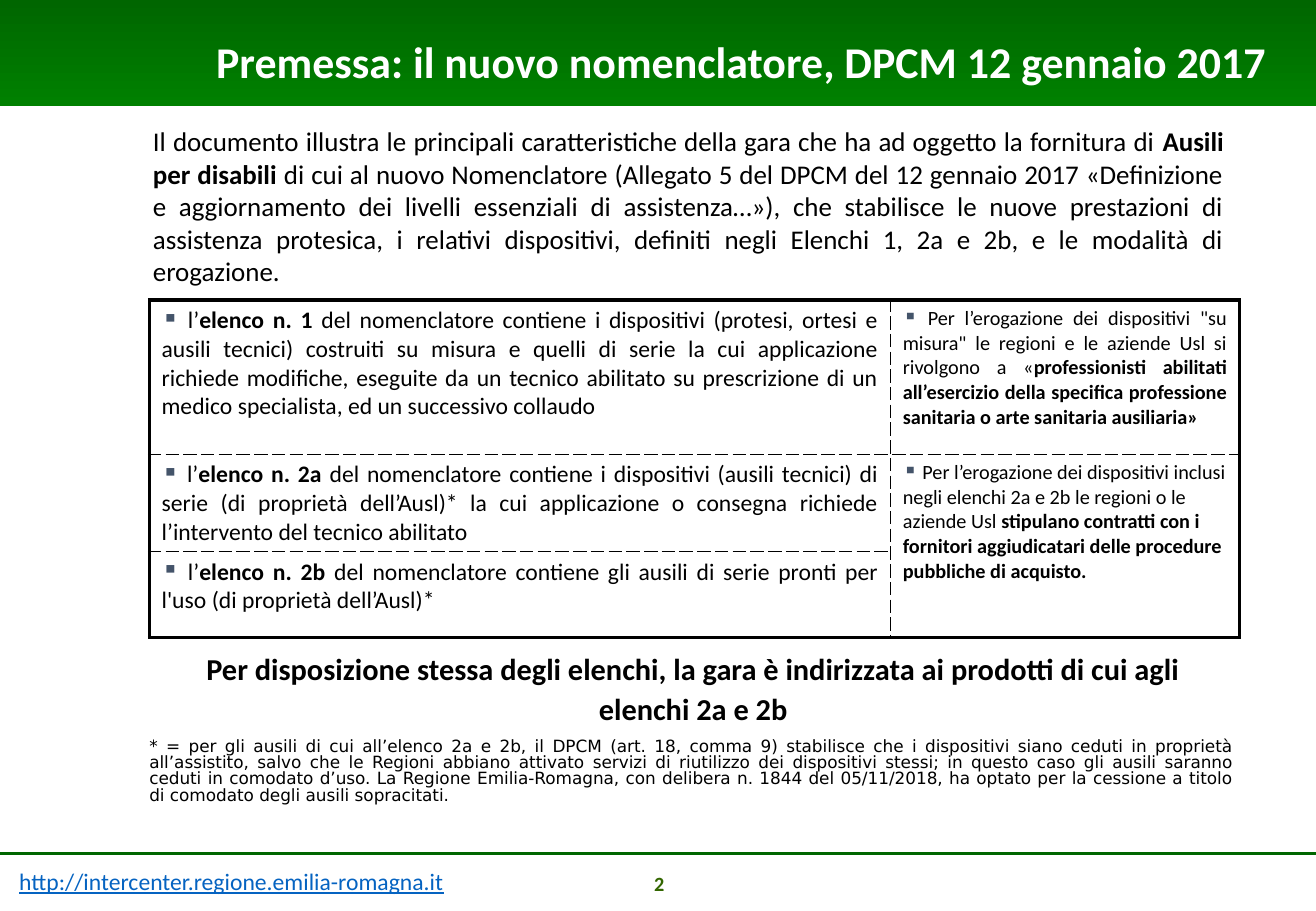
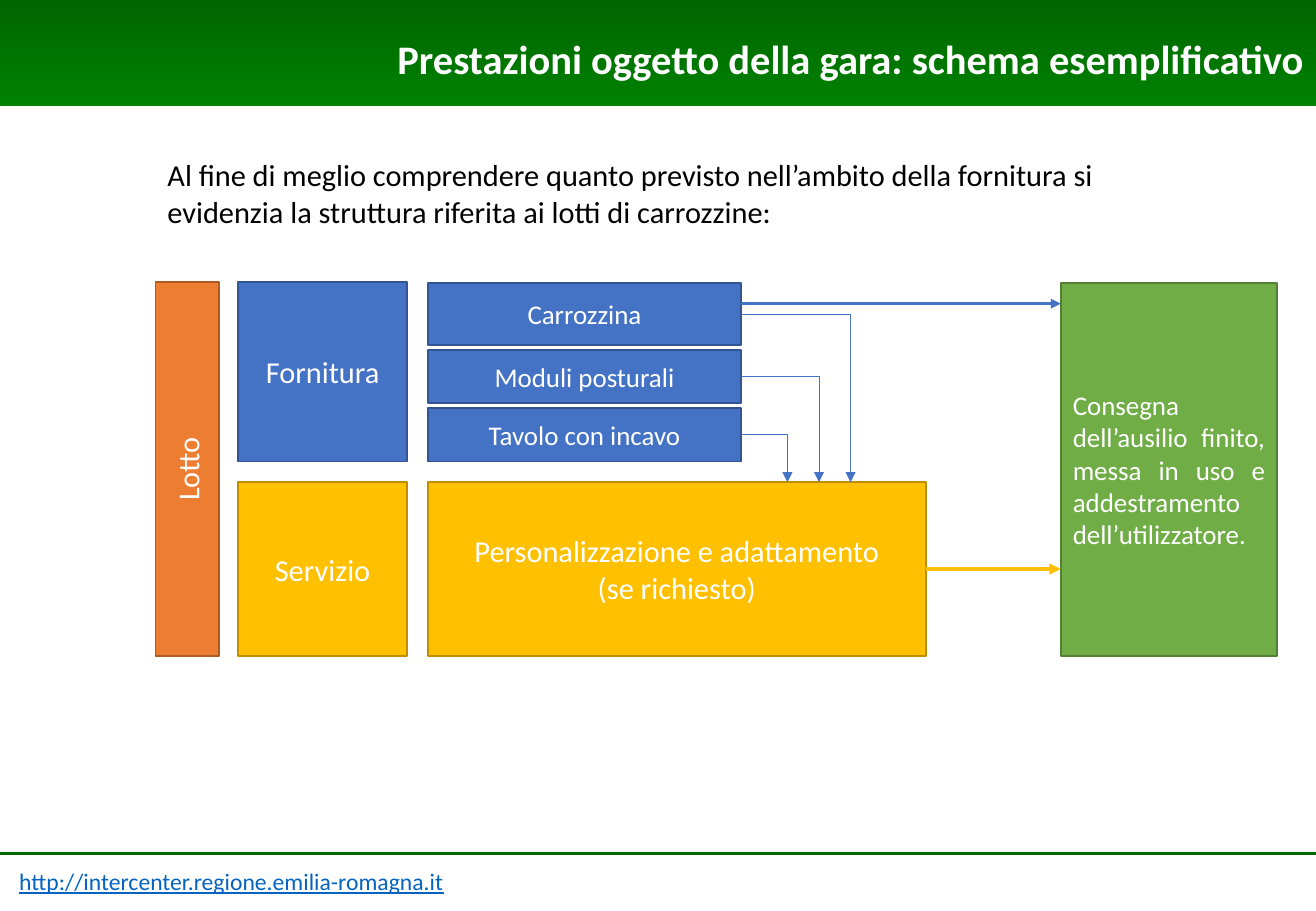
from lxml import etree
from pptx import Presentation
from pptx.dml.color import RGBColor
from pptx.enum.shapes import MSO_CONNECTOR, MSO_SHAPE
from pptx.enum.text import MSO_ANCHOR, PP_ALIGN
from pptx.oxml.ns import qn
from pptx.util import Inches, Pt

LEFT, CENTER, RIGHT, JUSTIFY = PP_ALIGN.LEFT, PP_ALIGN.CENTER, PP_ALIGN.RIGHT, PP_ALIGN.JUSTIFY
MIDDLE = MSO_ANCHOR.MIDDLE
RECTANGLE = MSO_SHAPE.RECTANGLE
STRAIGHT, ELBOW = MSO_CONNECTOR.STRAIGHT, MSO_CONNECTOR.ELBOW

WIDTH, HEIGHT = 10.83, 7.5
COLORS = {
    "band_top": "006600", "band_bottom": "008000", "number": "336600", "link": "0563C1",
    "white": "FFFFFF", "black": "000000", "bullet": "44546A",
    "blue": "4472C4", "blue_line": "325491",
    "gold": "FFC000", "gold_line": "BD8E00",
    "orange": "ED7D31", "orange_line": "AF5C24",
    "green": "70AD47", "green_line": "538035",
}

SITE = "http://intercenter.regione.emilia-romagna.it"
PREMISE_TITLE = "Premessa: il nuovo nomenclatore, DPCM 12 gennaio 2017"
PREMISE = (
    "Il documento illustra le principali caratteristiche della gara che ha ad oggetto la fornitura di "
    "|Ausili per disabili |di cui al nuovo Nomenclatore (Allegato 5 del DPCM del 12 gennaio 2017 "
    "«Definizione e aggiornamento dei livelli essenziali di assistenza…»), che stabilisce le nuove "
    "prestazioni di assistenza protesica, i relativi dispositivi, definiti negli Elenchi 1, 2a e 2b, "
    "e le modalità di erogazione."
)
LISTS = [
    " l’|elenco n. 1| del nomenclatore contiene i dispositivi (protesi, ortesi e ausili tecnici) "
    "costruiti su misura e quelli di serie la cui applicazione richiede modifiche, eseguite da un "
    "tecnico abilitato su prescrizione di un medico specialista, ed un successivo collaudo",
    " l’|elenco n. 2a| del nomenclatore contiene i dispositivi (ausili tecnici) di serie (di proprietà "
    "dell’Ausl)* la cui applicazione o consegna richiede l’intervento del tecnico abilitato",
    " l’|elenco n. 2b| del nomenclatore contiene gli ausili di serie pronti per l'uso "
    "(di proprietà dell’Ausl)*",
]
SUPPLIERS = [
    (" Per l’erogazione dei dispositivi \"su misura\" le regioni e le aziende Usl si rivolgono a «"
     "|professionisti abilitati all’esercizio della specifica professione sanitaria o arte sanitaria "
     "ausiliaria»", JUSTIFY),
    (" Per l’erogazione dei dispositivi inclusi negli elenchi 2a e 2b le regioni o le aziende Usl "
     "|stipulano contratti con i fornitori aggiudicatari delle procedure pubbliche di acquisto.", LEFT),
]
COLUMN_WIDTHS = [6.1, 2.87]
ROW_HEIGHTS = [1.27, 0.8, 0.71]
SCOPE = ("Per disposizione stessa degli elenchi, la gara è indirizzata ai prodotti di cui agli "
         "elenchi 2a e 2b")
FOOTNOTE = (
    "* = per gli ausili di cui all’elenco 2a e 2b, il DPCM (art. 18, comma 9) stabilisce che i "
    "dispositivi siano ceduti in proprietà all’assistito, salvo che le Regioni abbiano attivato servizi "
    "di riutilizzo dei dispositivi stessi; in questo caso gli ausili saranno ceduti in comodato d’uso. "
    "La Regione Emilia-Romagna, con delibera n. 1844 del 05/11/2018, ha optato per la cessione a titolo "
    "di comodato degli ausili sopracitati."
)

SCHEME_TITLE = "Prestazioni oggetto della gara: schema esemplificativo"
SCHEME_INTRO = ("Al fine di meglio comprendere quanto previsto nell’ambito della fornitura si evidenzia "
                "la struttura riferita ai lotti di carrozzine:")
PARTS = [("Carrozzina", 0.51), ("Moduli posturali", 0.44), ("Tavolo con incavo", 0.44)]
DELIVERY = "Consegna dell’ausilio finito,\nmessa in uso e addestramento dell’utilizzatore."
TOP, SERVICE_TOP, BOTTOM = 2.32, 3.97, 5.4
SUPPLY_HEIGHT, SERVICE_HEIGHT = 1.48, BOTTOM - SERVICE_TOP
LOT_LEFT, KIND_LEFT, PART_LEFT, DELIVERY_LEFT = 1.28, 1.96, 3.52, 8.73
KIND_WIDTH, PART_WIDTH, ADAPT_WIDTH = 1.39, 2.58, 4.1
PART_TOP, PART_GAP = 2.33, 0.04
DROP_RIGHT, DROP_STEP = 7, 0.26
DELIVERY_ARROW_Y = 2.5


def rgb(name):
    return RGBColor.from_string(COLORS[name])


def write(frame, text, size=16, color="black", font="Calibri", bold=False, underline=False,
          align=LEFT, spacing=None, bullet=False):
    frame.word_wrap = True
    para = frame.paragraphs[0]
    para.alignment = align
    if spacing:
        para.line_spacing = spacing
    if bullet:
        properties = para._p.get_or_add_pPr()
        properties.set("marL", "0")
        properties.set("indent", "0")
        bullet_color = etree.SubElement(properties, qn("a:buClr"))
        etree.SubElement(bullet_color, qn("a:srgbClr"), val=COLORS["bullet"])
        etree.SubElement(properties, qn("a:buChar"), char="▪")
    for index, piece in enumerate(text.split("|")):
        for number, line in enumerate(piece.split("\n")):
            if number:
                para.add_line_break()
            span = para.add_run()
            span.text = line
            span.font.name = font
            span.font.size = Pt(size)
            span.font.bold = bold or index % 2 == 1
            span.font.underline = underline
            span.font.color.rgb = rgb(color)


def add_text(page, place, text, **style):
    box = page.shapes.add_textbox(*map(Inches, place))
    write(box.text_frame, text, **style)


def add_block(page, place, text, color, size=18, align=CENTER, upward=False):
    block = page.shapes.add_shape(RECTANGLE, *map(Inches, place))
    block.shadow.inherit = False
    block.fill.solid()
    block.fill.fore_color.rgb = rgb(color)
    block.line.color.rgb = rgb(color + "_line")
    block.line.width = Pt(1)
    frame = block.text_frame
    frame.vertical_anchor = MIDDLE
    if upward:
        frame._txBody.bodyPr.set("vert", "vert270")
    write(frame, text, size=size, color="white", align=align)


def add_line(page, start, end, color, width, kind=STRAIGHT, arrow=True):
    line = page.shapes.add_connector(kind, *map(Inches, start + end))
    line.line.color.rgb = rgb(color)
    line.line.width = Pt(width)
    properties = line._element.spPr
    if kind == ELBOW:
        properties.find(qn("a:prstGeom")).set("prst", "bentConnector2")
    if arrow:
        etree.SubElement(line.line._get_or_add_ln(), qn("a:tailEnd"), type="triangle")
    etree.SubElement(properties, qn("a:effectLst"))


def add_page(deck, title, title_place, title_size):
    page = deck.slides.add_slide(deck.slide_layouts[6])
    band = page.shapes.add_shape(RECTANGLE, 0, 0, Inches(WIDTH), Inches(0.87))
    band.shadow.inherit = False
    band.line.fill.background()
    band.fill.gradient()
    band.fill.gradient_angle = 270
    for stop, color in zip(band.fill.gradient_stops, ("band_top", "band_bottom")):
        stop.color.rgb = rgb(color)
    add_text(page, (0.06, 7.09, 4.81, 0.34), SITE, size=14, color="link", underline=True)
    add_line(page, (0, 7.03), (WIDTH, 7.03), "band_top", 1.75, arrow=False)
    add_text(page, title_place, title, size=title_size, color="white", bold=True, align=RIGHT)
    return page


def set_borders(cell, row, column):
    last_row = row + (cell.span_height if cell.is_merge_origin else 1) == len(ROW_HEIGHTS)
    outer = {"L": column == 0, "R": column == len(COLUMN_WIDTHS) - 1, "T": row == 0, "B": last_row}
    properties = cell._tc.get_or_add_tcPr()
    for side, is_outer in outer.items():
        if side == "T" and cell.is_spanned:
            continue
        border = etree.SubElement(properties, qn("a:ln" + side), w=str(Pt(2.25 if is_outer else 1)))
        fill = etree.SubElement(border, qn("a:solidFill"))
        etree.SubElement(fill, qn("a:srgbClr"), val=COLORS["black"])
        etree.SubElement(border, qn("a:prstDash"), val="solid" if is_outer else "dash")


def add_lists_table(page):
    place = (1.23, 2.47, sum(COLUMN_WIDTHS), sum(ROW_HEIGHTS))
    table = page.shapes.add_table(len(ROW_HEIGHTS), len(COLUMN_WIDTHS), *map(Inches, place)).table
    table.first_row = table.horz_banding = False
    for column, width in zip(table.columns, COLUMN_WIDTHS):
        column.width = Inches(width)
    for row, height in zip(table.rows, ROW_HEIGHTS):
        row.height = Inches(height)
    table.cell(1, 1).merge(table.cell(2, 1))
    for row in range(len(ROW_HEIGHTS)):
        for column in range(len(COLUMN_WIDTHS)):
            cell = table.cell(row, column)
            set_borders(cell, row, column)
            cell.fill.background()
    for row, text in enumerate(LISTS):
        write(table.cell(row, 0).text_frame, text, size=14, align=JUSTIFY, bullet=True)
    for row, (text, align) in enumerate(SUPPLIERS):
        write(table.cell(row, 1).text_frame, text, size=12, align=align, bullet=True)


def build_premise(deck):
    page = add_page(deck, PREMISE_TITLE, (0.65, 0.24, 9.88, 0.54), 26)
    add_text(page, (4.3, 7.12, 2.25, 0.27), "2", size=12, color="number", bold=True, align=CENTER)
    add_text(page, (1.16, 0.98, 9.01, 1.45), PREMISE, align=JUSTIFY)
    add_lists_table(page)
    add_text(page, (1.13, 6.04, 9.11, 0.64), FOOTNOTE, size=10, font="DejaVu Sans",
             align=JUSTIFY, spacing=0.8)
    add_text(page, (1.23, 5.27, 8.95, 0.75), SCOPE, size=18, bold=True, align=CENTER, spacing=1.1)


def build_scheme(deck):
    page = add_page(deck, SCHEME_TITLE, (1.05, 0.23, 9.78, 0.51), 24)
    add_text(page, (1.28, 1.24, 8.73, 0.71), SCHEME_INTRO, size=18)
    add_block(page, (LOT_LEFT, TOP, 0.52, BOTTOM - TOP), "Lotto", "orange", upward=True)
    add_block(page, (KIND_LEFT, TOP, KIND_WIDTH, SUPPLY_HEIGHT), "Fornitura", "blue")
    add_block(page, (KIND_LEFT, SERVICE_TOP, KIND_WIDTH, SERVICE_HEIGHT), "Servizio", "gold")
    add_block(page, (PART_LEFT, SERVICE_TOP, ADAPT_WIDTH, SERVICE_HEIGHT),
              "Personalizzazione e adattamento\n(se richiesto)", "gold")
    add_block(page, (DELIVERY_LEFT, PART_TOP, 1.78, BOTTOM - PART_TOP), DELIVERY, "green",
              size=16, align=JUSTIFY)
    part_right = PART_LEFT + PART_WIDTH
    top = PART_TOP
    for index, (name, height) in enumerate(PARTS):
        add_block(page, (PART_LEFT, top, PART_WIDTH, height), name, "blue", size=16)
        add_line(page, (part_right, top + height / 2), (DROP_RIGHT - index * DROP_STEP, SERVICE_TOP),
                 "blue", 0.5, kind=ELBOW)
        top += height + PART_GAP
    add_line(page, (part_right, DELIVERY_ARROW_Y), (DELIVERY_LEFT, DELIVERY_ARROW_Y), "blue", 1.5)
    service_middle = SERVICE_TOP + SERVICE_HEIGHT / 2
    add_line(page, (PART_LEFT + ADAPT_WIDTH, service_middle), (DELIVERY_LEFT, service_middle),
             "gold", 2.25)


def main():
    deck = Presentation()
    deck.slide_width, deck.slide_height = Inches(WIDTH), Inches(HEIGHT)
    build_premise(deck)
    build_scheme(deck)
    deck.save("out.pptx")


if __name__ == "__main__":
    main()
